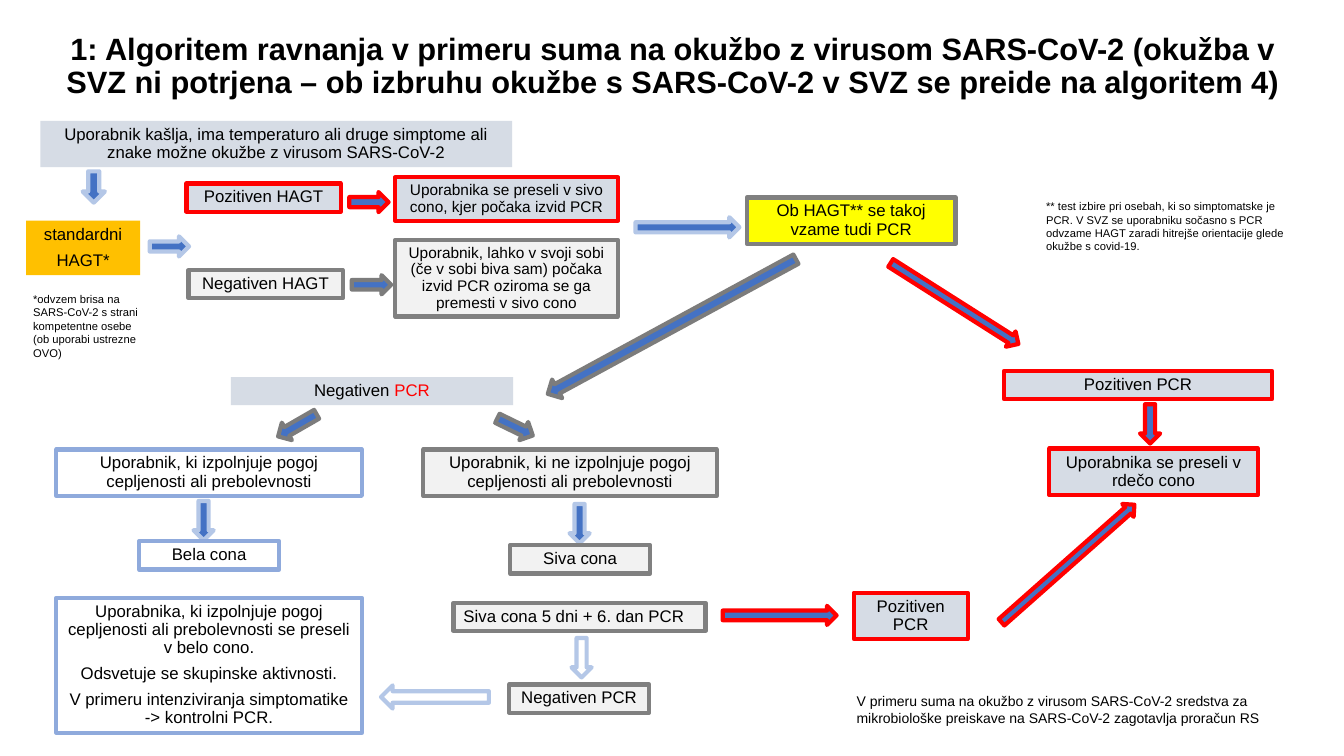
from pptx import Presentation
from pptx.dml.color import RGBColor
from pptx.enum.shapes import MSO_SHAPE
from pptx.enum.text import MSO_ANCHOR, PP_ALIGN
from pptx.util import Inches, Pt

# Content; positions are in grid cells of a tenth of an inch
TITLE = ("1: Algoritem ravnanja v primeru suma na okužbo z virusom SARS-CoV-2 (okužba v SVZ ni potrjena "
         "– ob izbruhu okužbe s SARS-CoV-2 v SVZ se preide na algoritem 4)")

# Box styles: fill, outline
BOX_STYLES = {
    "start": ("D6DCE5", None),
    "positive": ("D6DCE5", "FF0000"),
    "grey": ("F2F2F2", "808080"),
    "white": (None, "8FAADC"),
    "test": ("FFC000", None),
    "both": ("FFFF00", "808080"),
}

# Boxes: style, left, top, width, lines of text, size, paragraphs
BOXES = [
    ("start", 4, 12, 46.8, 2, 12,
     ["Uporabnik kašlja, ima temperaturo ali druge simptome ali znake možne okužbe z virusom SARS-CoV-2"]),
    ("test", 2.6, 21.9, 11.3, 2, 12, ["standardni", "HAGT*"]),
    ("positive", 18.5, 18.2, 15.3, 1, 12, ["Pozitiven HAGT"]),
    ("grey", 18.7, 26.8, 15.3, 1, 12, ["Negativen HAGT"]),
    ("positive", 39.2, 17.6, 22.1, 2, 11, ["Uporabnika se preseli v sivo cono, kjer počaka izvid PCR"]),
    ("grey", 39.2, 23.8, 22.1, 4, 11,
     ["Uporabnik, lahko v svoji sobi (če v sobi biva sam) počaka izvid PCR oziroma se ga premesti v sivo cono"]),
    ("both", 74.1, 19.6, 20.7, 2, 12, ["Ob HAGT** se takoj vzame tudi PCR"]),
    ("start", 22.9, 37.4, 28, 1, 12, [(("Negativen ", "000000"), ("PCR", "FF0000"))]),
    ("positive", 99.6, 36.8, 26.6, 1, 12, ["Pozitiven PCR"]),
    ("positive", 104.1, 44.5, 20.7, 2, 12, ["Uporabnika se preseli v rdečo cono"]),
    ("white", 5.6, 44.6, 30.3, 2, 12, ["Uporabnik, ki izpolnjuje pogoj cepljenosti ali prebolevnosti"]),
    ("grey", 42, 44.6, 29.1, 2, 12, ["Uporabnik, ki ne izpolnjuje pogoj cepljenosti ali prebolevnosti"]),
    ("white", 13.8, 53.7, 13.9, 1, 12, ["Bela cona"]),
    ("grey", 50.6, 54.1, 13.9, 1, 12, ["Siva cona"]),
    ("white", 5.6, 59.3, 30.3, 6, 12,
     ["Uporabnika, ki izpolnjuje pogoj cepljenosti ali prebolevnosti se preseli v belo cono.",
      "Odsvetuje se skupinske aktivnosti.",
      "V primeru intenziviranja simptomatike -> kontrolni PCR."]),
    ("grey", 45, 59.8, 25, 1, 12, ["Siva cona 5 dni + 6. dan PCR"]),
    ("positive", 84.7, 58.8, 11.3, 2, 12, ["Pozitiven PCR"]),
    ("grey", 50.5, 67.9, 13.9, 1, 12, ["Negativen PCR"]),
]
LEFT_ALIGNED = ["Siva cona 5 dni + 6. dan PCR"]

# Arrow styles: fill, outline
ARROW_STYLES = {
    "blue": ("4472C4", "B4C7E7"),
    "red": ("4472C4", "FF0000"),
    "grey": ("4472C4", "7C7C7C"),
    "hollow": (None, "B4C7E7"),
}

# Arrows: style, centre x, centre y, thickness, length, turn from pointing down
ARROWS = [
    ("blue", 9.3, 18.55, 2.2, 3.1, 0),
    ("blue", 16.8, 24.45, 2, 3.9, 270),
    ("red", 36.6, 20.05, 2, 3.9, 270),
    ("grey", 36.85, 28.25, 1.9, 3.9, 270),
    ("blue", 68.2, 22.55, 2, 10.3, 270),
    ("grey", 66.65, 32.4, 2.1, 28, 61.5),
    ("red", 94.7, 30.1, 1.8, 15, 302.4),
    ("red", 114.1, 42.05, 2, 3.9, 0),
    ("grey", 29.5, 42.2, 2, 4.4, 60.1),
    ("grey", 51.1, 42.35, 2, 3.9, 295.9),
    ("blue", 20.2, 51.65, 2, 3.9, 0),
    ("blue", 57.5, 51.95, 2, 3.9, 0),
    ("red", 77.35, 61.05, 1.9, 11.3, 270),
    ("red", 105.95, 55.9, 1.7, 17.6, 228.5),
    ("hollow", 57.7, 65.25, 2, 3.9, 0),
    ("hollow", 43.15, 69.15, 2.3, 10.7, 90),
]

# Notes: left, top, width, height, size, text
NOTES = [
    (102.8, 19.3, 25.6, 6.4, 8,
     "** test izbire pri osebah, ki so simptomatske je PCR. V SVZ se uporabniku sočasno s PCR "
     "odvzame HAGT zaradi hitrejše orientacije glede okužbe s covid-19."),
    (2.3, 28.5, 12.5, 7.7, 8,
     "*odvzem brisa na SARS-CoV-2 s strani kompetentne osebe (ob uporabi ustrezne OVO)"),
    (84, 68.2, 48, 4.4, 10,
     "V primeru suma na okužbo z virusom SARS-CoV-2 sredstva za mikrobiološke preiskave "
     "na SARS-CoV-2 zagotavlja proračun RS"),
]

PARAGRAPH_GAP = 0.8  # grid cells between paragraphs of a box


def cells(*counts):
    return [Inches(count / 10) for count in counts]


def color(hex_string):
    return RGBColor.from_string(hex_string)


def write(shape, paragraphs, size=12, bold=False, align=PP_ALIGN.CENTER, spacing=0.9,
          anchor=MSO_ANCHOR.TOP):
    frame = shape.text_frame
    frame.word_wrap = True
    frame.vertical_anchor = anchor
    for index, content in enumerate(paragraphs):
        paragraph = frame.add_paragraph() if index else frame.paragraphs[0]
        paragraph.alignment = align
        paragraph.line_spacing = spacing
        paragraph.space_before = cells(PARAGRAPH_GAP if index else 0)[0]
        runs = [(content, "000000")] if isinstance(content, str) else content
        for words, text_color in runs:
            run = paragraph.add_run()
            run.text = words
            run.font.name = "Arial"
            run.font.size = Pt(size)
            run.font.bold = bold
            run.font.color.rgb = color(text_color)


def add_block(slide, preset, place, fill, outline):
    block = slide.shapes.add_shape(preset, *cells(*place))
    block.shadow.inherit = False
    if fill:
        block.fill.solid()
        block.fill.fore_color.rgb = color(fill)
    else:
        block.fill.background()
    if outline:
        block.line.color.rgb = color(outline)
        block.line.width = Pt(3)
    else:
        block.line.fill.background()
    return block


def main():
    deck = Presentation()
    deck.slide_width, deck.slide_height = cells(133.33, 75)
    slide = deck.slides.add_slide(deck.slide_layouts[5])

    # Title
    title = slide.shapes.title
    title.left, title.top, title.width, title.height = cells(4, 2.2, 125.5, 8.9)
    write(title, [TITLE], size=22, bold=True, anchor=MSO_ANCHOR.MIDDLE)

    # Arrows
    for style, center_x, center_y, thickness, length, turn in ARROWS:
        place = (center_x - thickness / 2, center_y - length / 2, thickness, length)
        arrow = add_block(slide, MSO_SHAPE.DOWN_ARROW, place, *ARROW_STYLES[style])
        arrow.rotation = turn

    # Boxes, as high as their text needs
    for style, left, top, width, lines, size, paragraphs in BOXES:
        height = 1 + 0.15 * size * lines + PARAGRAPH_GAP * (len(paragraphs) - 1)
        box = add_block(slide, MSO_SHAPE.RECTANGLE, (left, top, width, height), *BOX_STYLES[style])
        align = PP_ALIGN.LEFT if paragraphs[0] in LEFT_ALIGNED else PP_ALIGN.CENTER
        write(box, paragraphs, size=size, align=align)

    # Notes
    for left, top, width, height, size, words in NOTES:
        note = slide.shapes.add_textbox(*cells(left, top, width, height))
        write(note, [words], size=size, align=PP_ALIGN.LEFT, spacing=1.0)

    deck.save("out.pptx")


if __name__ == "__main__":
    main()
